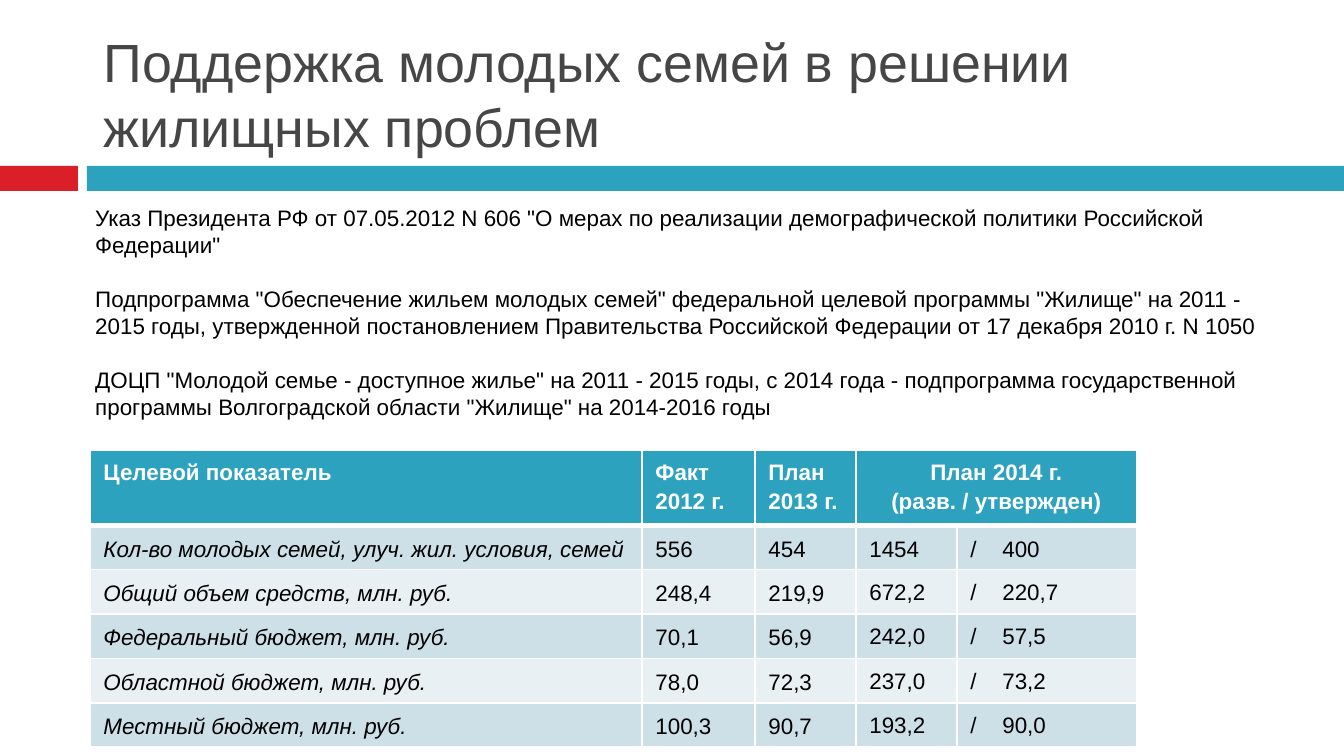
"""Build the slide on housing support for young families."""
from dataclasses import dataclass

from pptx import Presentation
from pptx.dml.color import RGBColor as RGB
from pptx.enum.shapes import MSO_SHAPE as SHAPE
from pptx.enum.text import MSO_ANCHOR as ANCHOR, MSO_AUTO_SIZE as AUTO, PP_ALIGN as ALIGN
from pptx.oxml.ns import qn
from pptx.util import Pt
from lxml.etree import SubElement

SCALE = 914400 / 134.4


@dataclass(frozen=True)
class Theme:
    font: str = "Arial"
    title_size: float = 28.8
    body_size: float = 12
    title: str = "464646"
    text: str = "000000"
    white: str = "FFFFFF"
    red: str = "DA1F28"
    teal: str = "2DA2BF"
    bands: tuple = ("CDE0E8", "E8F0F4")


THEME = Theme()

LAWS = [
    'Указ Президента РФ от 07.05.2012 N 606 "О мерах по реализации демографической политики Российской Федерации"',
    'Подпрограмма "Обеспечение жильем молодых семей" федеральной целевой программы "Жилище" на 2011 - 2015 годы, '
    'утвержденной постановлением Правительства Российской Федерации от 17 декабря 2010 г. N 1050',
    'ДОЦП "Молодой семье - доступное жилье" на 2011 - 2015 годы, с 2014 года - подпрограмма государственной '
    'программы Волгоградской области "Жилище" на 2014-2016 годы',
]
HEADER = ["Целевой показатель", "Факт 2012 г.", "План 2013 г.", "План 2014 г.\n(разв. / утвержден)"]
ROWS = [
    ["Кол-во молодых семей, улуч. жил. условия, семей", "556", "454", "1454", "/\t400"],
    ["Общий объем средств, млн. руб.", "248,4", "219,9", "672,2", "/\t220,7"],
    ["Федеральный бюджет, млн. руб.", "70,1", "56,9", "242,0", "/\t57,5"],
    ["Областной бюджет, млн. руб.", "78,0", "72,3", "237,0", "/\t73,2"],
    ["Местный бюджет, млн. руб.", "100,3", "90,7", "193,2", "/\t90,0"],
]
WIDTHS = [552, 113, 101, 101, 180]
HEADER_HEIGHT, ROW_HEIGHT = 74, 44


def px(n):
    return round(n * SCALE)


def put_text(tf, text, size=THEME.body_size, color=THEME.text, bold=False, italic=False,
             align=ALIGN.LEFT, spacing=1.0, gap=0, tab=0):
    """Fill a text frame with one formatted paragraph per line of text."""
    for i, line in enumerate(text.split("\n")):
        p = tf.add_paragraph() if i else tf.paragraphs[0]
        p.alignment, p.line_spacing = align, spacing
        p.space_before = Pt(gap if i else 0)
        if tab:
            tabs = SubElement(p._p.get_or_add_pPr(), qn("a:tabLst"))
            SubElement(tabs, qn("a:tab"), pos=str(px(tab)), algn="l")
        r = p.add_run()
        r.text = line
        font = r.font
        font.name, font.size, font.bold, font.italic = THEME.font, Pt(size), bold, italic
        font.color.rgb = RGB.from_string(color)


class Deck:
    """Hold the theme and the current slide, and add elements to it."""

    def __init__(self, width, height, theme):
        self.theme = theme
        self.prs = Presentation()
        self.prs.slide_width, self.prs.slide_height = px(width), px(height)
        self.s = self.prs.slides.add_slide(self.prs.slide_layouts[5])

    def bar(self, x, y, w, h, color):
        sp = self.s.shapes.add_shape(SHAPE.RECTANGLE, px(x), px(y), px(w), px(h))
        sp.shadow.inherit = False
        sp.fill.solid()
        sp.fill.fore_color.rgb = RGB.from_string(color)
        sp.line.fill.background()

    def title(self, x, y, w, h, text):
        sp = self.s.shapes.title
        sp.left, sp.top, sp.width, sp.height = px(x), px(y), px(w), px(h)
        tf = sp.text_frame
        tf.word_wrap, tf.auto_size, tf.vertical_anchor = True, AUTO.NONE, ANCHOR.BOTTOM
        put_text(tf, text, size=self.theme.title_size, color=self.theme.title)

    def text(self, x, y, w, h, text, **fmt):
        tf = self.s.shapes.add_textbox(px(x), px(y), px(w), px(h)).text_frame
        tf.word_wrap = True
        put_text(tf, text, **fmt)

    def cell(self, cell, text, fill, anchor, bottom=1, **fmt):
        put_text(cell.text_frame, text, spacing=1.15, **fmt)
        cell.vertical_anchor = anchor
        tcPr = cell._tc.get_or_add_tcPr()
        for side, width in (("L", 1), ("R", 1), ("T", 1), ("B", bottom)):
            ln = SubElement(tcPr, qn("a:ln" + side), w=str(Pt(width)))
            SubElement(SubElement(ln, qn("a:solidFill")), qn("a:srgbClr"), val=self.theme.white)
        cell.fill.solid()
        cell.fill.fore_color.rgb = RGB.from_string(fill)

    def table(self, x, y, widths, header, rows):
        t = self.theme
        height = HEADER_HEIGHT + ROW_HEIGHT * len(rows)
        frame = self.s.shapes.add_table(len(rows) + 1, len(widths), px(x), px(y), px(sum(widths)), px(height))
        table = frame.table
        for col, width in zip(table.columns, widths):
            col.width = px(width)
        for i, row in enumerate(table.rows):
            row.height = px(ROW_HEIGHT if i else HEADER_HEIGHT)
        last = len(header) - 1
        table.cell(0, last).merge(table.cell(0, len(widths) - 1))
        for c, text in enumerate(header):
            self.cell(table.cell(0, c), text, t.teal, ANCHOR.TOP, bottom=3, color=t.white, bold=True,
                      align=ALIGN.CENTER if c == last else ALIGN.LEFT)
        for i, row in enumerate(rows):
            for c, text in enumerate(row):
                anchor = ANCHOR.TOP if i and c >= last else ANCHOR.MIDDLE
                self.cell(table.cell(i + 1, c), text, t.bands[i % 2], anchor,
                          italic=c == 0, tab=32 if "\t" in text else 0)


def main():
    deck = Deck(1344, 756, THEME)
    deck.bar(0, 166, 78, 25, THEME.red)
    deck.bar(87, 166, 1257, 25, THEME.teal)
    deck.title(90, 17, 1199, 148, "Поддержка молодых семей в решении жилищных проблем")
    deck.text(82, 198, 1218, 231, "\n".join(LAWS), gap=14.4)
    deck.table(90, 450, WIDTHS, HEADER, ROWS)
    deck.prs.save("out.pptx")


if __name__ == "__main__":
    main()
